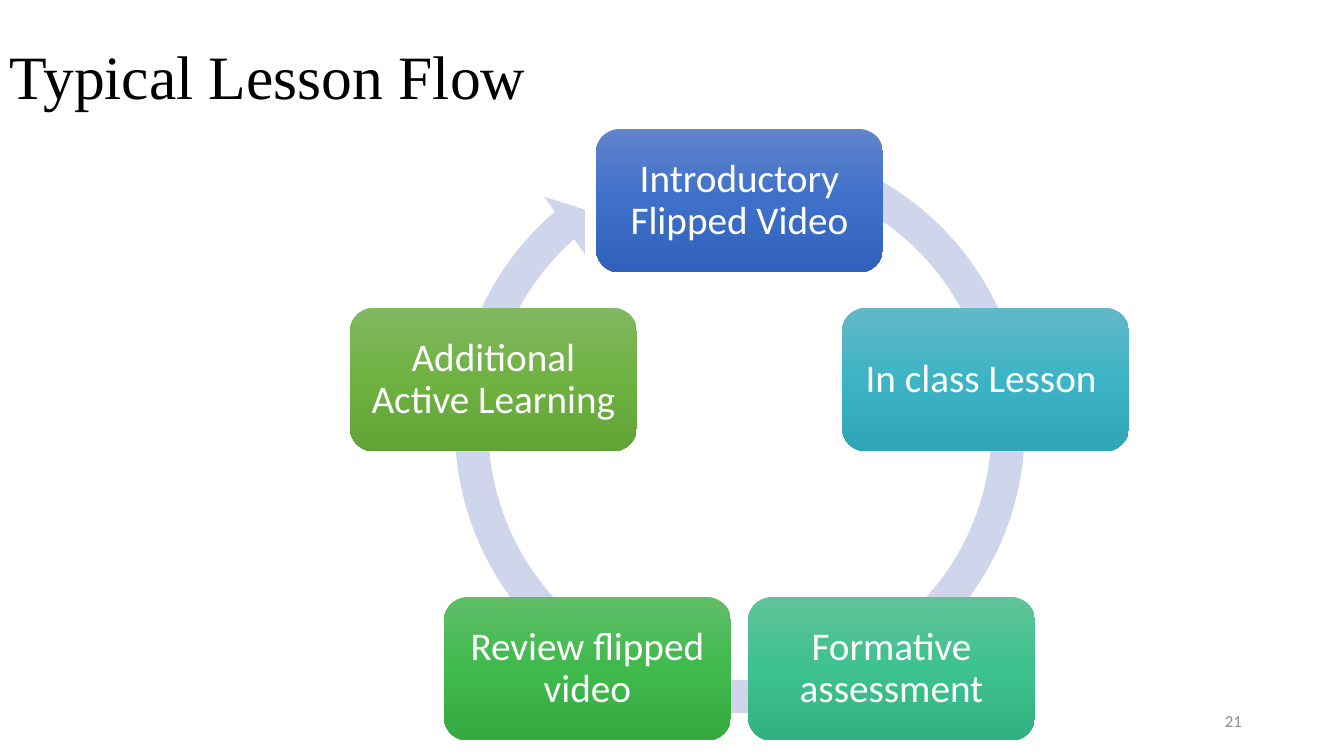
from copy import deepcopy
from math import cos, radians, sin

from pptx import Presentation
from pptx.dml.color import RGBColor
from pptx.enum.shapes import MSO_SHAPE
from pptx.enum.text import MSO_ANCHOR, PP_ALIGN
from pptx.oxml.ns import qn
from pptx.util import Pt

CIRCULAR_ARROW = MSO_SHAPE.CIRCULAR_ARROW
ROUNDED = MSO_SHAPE.ROUNDED_RECTANGLE
MIDDLE = MSO_ANCHOR.MIDDLE
LEFT, CENTER, RIGHT = PP_ALIGN.LEFT, PP_ALIGN.CENTER, PP_ALIGN.RIGHT

BLACK = RGBColor(0x00, 0x00, 0x00)
WHITE = RGBColor(0xFF, 0xFF, 0xFF)
GRAY = RGBColor(0x8C, 0x8C, 0x8C)
PALE_BLUE = RGBColor(0xCF, 0xD5, 0xEA)
BLUES = RGBColor(0x61, 0x83, 0xCB), RGBColor(0x3E, 0x70, 0xCA), RGBColor(0x30, 0x62, 0xBB)
TEALS = RGBColor(0x61, 0xB8, 0xC7), RGBColor(0x3D, 0xB4, 0xC6), RGBColor(0x30, 0xA5, 0xB7)
MINTS = RGBColor(0x60, 0xC3, 0x9A), RGBColor(0x3D, 0xC1, 0x8F), RGBColor(0x31, 0xB0, 0x80)
GREENS = RGBColor(0x60, 0xBE, 0x68), RGBColor(0x40, 0xB9, 0x4D), RGBColor(0x34, 0xAA, 0x41)
LIMES = RGBColor(0x81, 0xB8, 0x61), RGBColor(0x6F, 0xB2, 0x42), RGBColor(0x62, 0xA3, 0x36)


def write(shape, text, *, size, color, font="Calibri", align=LEFT, spacing=1.0, inset=7.2):
    frame = shape.text_frame
    frame.word_wrap = True
    frame.vertical_anchor = MIDDLE
    frame.margin_left = frame.margin_right = Pt(inset)
    paragraph = frame.paragraphs[0]
    paragraph.text = text
    paragraph.alignment = align
    paragraph.line_spacing = spacing
    paragraph.font.name = font
    paragraph.font.size = Pt(size)
    paragraph.font.color.rgb = color


prs = Presentation()
prs.slide_width, prs.slide_height = Pt(960), Pt(540)
slide = prs.slides.add_slide(prs.slide_layouts[6])
shapes = slide.shapes

# Title and page number
title = shapes.add_textbox(Pt(0), Pt(-1.4), Pt(584.6), Pt(116.6))
write(title, "Typical Lesson Flow", size=44, color=BLACK,
      font="Times New Roman", spacing=0.9)
page_number = shapes.add_textbox(Pt(678.2), Pt(500.4), Pt(216), Pt(28.8))
write(page_number, "21", size=12, color=GRAY, align=RIGHT)

# Ring arrow behind the steps
ring = shapes.add_shape(CIRCULAR_ARROW, Pt(311.8), Pt(89.3), Pt(433.4), Pt(433.4))
ring.shadow.inherit = False
ring.fill.solid()
ring.fill.fore_color.rgb = PALE_BLUE
ring.line.fill.background()
for index, value in enumerate((0.055, 3.307, 137.501, 174.017, 0.058)):
    ring.adjustments[index] = value

# Lesson steps, clockwise from the top of the cycle
STEPS = [
    ("Introductory Flipped Video", BLUES),
    ("In class Lesson ", TEALS),
    ("Formative assessment", MINTS),
    ("Review flipped video", GREENS),
    ("Additional Active Learning", LIMES),
]
CENTER_X, CENTER_Y, RADIUS = 528.2, 328.2, 184.8
STEP_W, STEP_H = 205, 102.5

for index, (label, shades) in enumerate(STEPS):
    angle = radians(index * 360 / len(STEPS) - 90)
    left = CENTER_X + RADIUS * cos(angle) - STEP_W / 2
    top = CENTER_Y + RADIUS * sin(angle) - STEP_H / 2
    step = shapes.add_shape(ROUNDED, Pt(left), Pt(top), Pt(STEP_W), Pt(STEP_H))
    step.shadow.inherit = False
    step.line.fill.background()

    # A new gradient has two stops; add a third one
    step.fill.gradient()
    step.fill.gradient_angle = 270
    stop_list = step._element.spPr.find(qn("a:gradFill")).find(qn("a:gsLst"))
    stop_list.append(deepcopy(stop_list[-1]))
    for stop, position, shade in zip(step.fill.gradient_stops, (0, 0.5, 1), shades):
        stop.position = position
        stop.color.rgb = shade

    write(step, label, size=28, color=WHITE, align=CENTER, spacing=0.9, inset=8.64)

prs.save("out.pptx")
